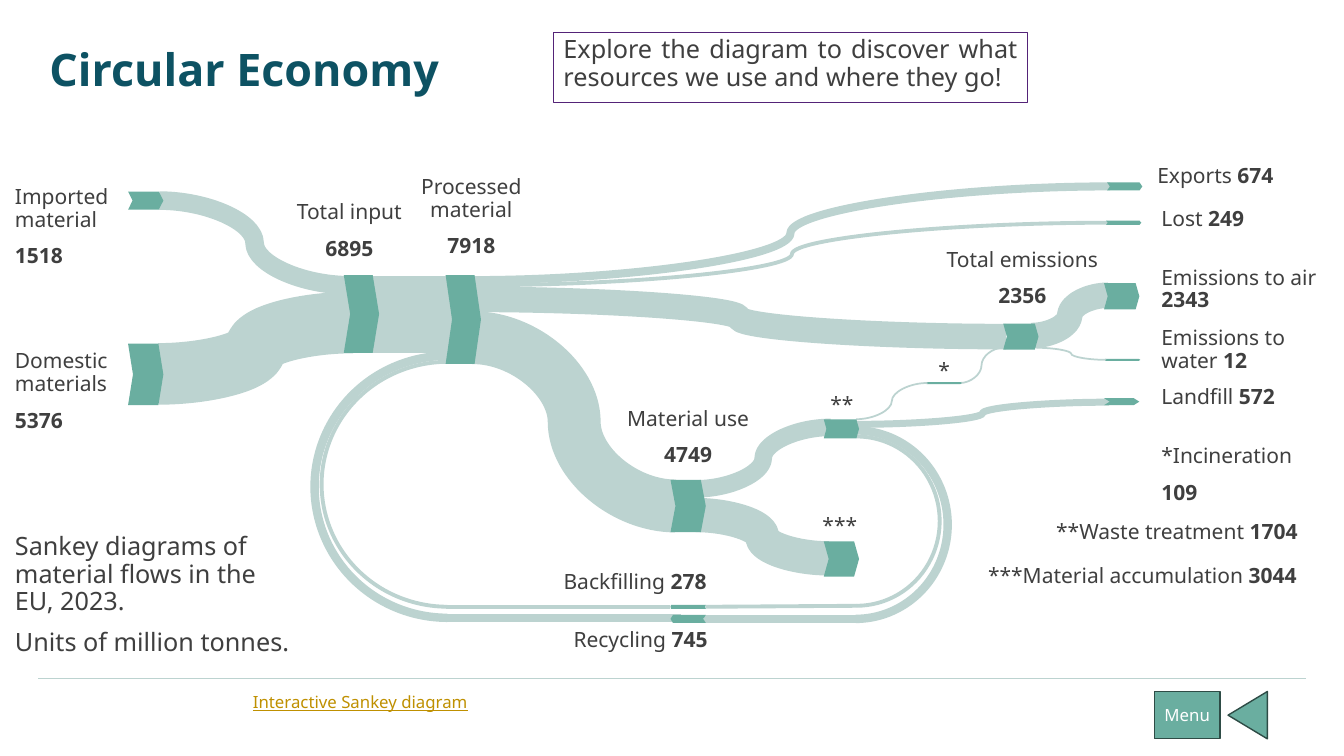
import pptx
import pptx.util
import pptx.dml.color
import pptx.enum.shapes
import pptx.enum.text
import pptx.oxml.ns
from lxml import etree

Inches = pptx.util.Inches
Pt = pptx.util.Pt
RGBColor = pptx.dml.color.RGBColor
SHAPE = pptx.enum.shapes.MSO_SHAPE
CONNECTOR = pptx.enum.shapes.MSO_CONNECTOR
ALIGN = pptx.enum.text.PP_ALIGN
ANCHOR = pptx.enum.text.MSO_ANCHOR

FONT = "Noto Sans"
TEXT = RGBColor(0x3F, 0x3F, 0x3F)
TITLE = RGBColor(0x0D, 0x52, 0x63)
FLOW = RGBColor(0xBC, 0xD3, 0xD0)
NODE = RGBColor(0x6A, 0xAE, 0xA0)
OUTLINE = RGBColor(0x2E, 0x4C, 0x46)
PURPLE = RGBColor(0x54, 0x23, 0x78)
GOLD = RGBColor(0xBF, 0x90, 0x00)
WHITE = RGBColor(0xFF, 0xFF, 0xFF)

HEADING = "Circular Economy"
INVITATION = "Explore the diagram to discover what resources we use and where they go!"
EXPLANATION = [["Sankey diagrams of material flows in the EU, 2023."], ["Units of million tonnes."]]

STACKED_LABELS = [
    ("Total emissions", "2356", 9.12, 2.42, 2.04, 0.8, ALIGN.CENTER),
    ("*Incineration", "109", 11.42, 4.37, 1.55, 0.8, ALIGN.LEFT),
    ("Imported material", "1518", 0.05, 1.8, 1.26, 1.17, ALIGN.LEFT),
    ("Domestic materials", "5376", 0.05, 3.43, 1.63, 1.17, ALIGN.LEFT),
    ("Material use", "4749", 6.01, 4, 1.63, 0.8, ALIGN.CENTER),
    ("Total input", "6895", 2.65, 1.95, 1.63, 0.8, ALIGN.CENTER),
    ("Processed material", "7918", 3.86, 1.7, 1.63, 0.8, ALIGN.CENTER),
]
INLINE_LABELS = [
    ("Exports ", "674", 11.38, 1.59, 1.63, 0.4, ALIGN.LEFT),
    ("Lost ", "249", 11.42, 2.02, 1.09, 0.35, ALIGN.LEFT),
    ("Emissions to air ", "2343", 11.42, 2.6, 1.77, 0.6, ALIGN.LEFT),
    ("Emissions to water ", "12", 11.42, 3.2, 1.94, 0.8, ALIGN.LEFT),
    ("Landfill ", "572", 11.42, 3.78, 1.63, 0.48, ALIGN.LEFT),
    ("***Material accumulation ", "3044", 9.48, 5.56, 3.48, 0.45, ALIGN.RIGHT),
    ("**Waste treatment ", "1704", 10.28, 5.12, 2.69, 0.77, ALIGN.RIGHT),
    ("Backfilling ", "278", 5.4, 5.62, 1.8, 0.42, ALIGN.CENTER),
    ("Recycling ", "745", 5.59, 6.19, 2.24, 0.8, ALIGN.LEFT),
]
FOOTNOTE_MARKS = [
    ("*", 9.16, 3.53, 0.41, 0.31),
    ("***", 8.01, 5.06, 0.64, 0.35),
    ("**", 8.06, 3.86, 0.58, 0.34),
]

CURVED_FLOWS = [
    (1.58, 1.99, 3.47, 2.83, 13.25),
    (1.57, 3.71, 3.5, 3.2, 44),
    (4.69, 3.35, 6.7, 5.02, 37.75),
    (6.9, 5.11, 8.22, 5.54, 24.5),
    (6.9, 4.85, 8.24, 4.24, 12.5),
    (8.49, 4.21, 11, 3.99, 5),
    (10.23, 3.33, 10.99, 2.93, 18.25),
    (4.68, 2.97, 9.98, 3.34, 18.25),
    (4.67, 2.78, 11.01, 1.85, 5.75),
    (4.72, 2.83, 10.99, 2.21, 2.75),
    (8.49, 4.16, 9.2, 3.8, 1.25),
    (9.52, 3.8, 9.95, 3.45, 1.25),
    (10.28, 3.45, 10.97, 3.57, 1.25),
]
STRAIGHT_FLOWS = [
    (3.66, 3.12, 4.49, 3.12, 55.25),
    (8.5, 6.01, 7, 6.02, 2.75),
    (8.49, 6.14, 6.98, 6.14, 6),
    (6.65, 6.02, 4.42, 6.02, 2.75),
    (6.75, 6.13, 4.43, 6.13, 6),
]
FOOTER_RULE = (0.38, 6.73, 12.95, 6.73, 1.1)

RIGHT_HALF = (161.88, 53.9)
LEFT_HALF = (54.1, 162.12)
RETURN_LOOPS = [
    (7.57, 4.27, 1.83, 1.87, RIGHT_HALF, 6),
    (7.67, 4.33, 1.65, 1.68, RIGHT_HALF, 2.75),
    (3.12, 3.53, 2.64, 2.6, LEFT_HALF, 6),
    (3.19, 3.59, 2.5, 2.43, LEFT_HALF, 2.75),
]

NODE_WIDTH = 0.35
NODES = [
    (10.95, 2.81, 0.26, 0.14, 0),
    (10.95, 3.95, 0.07, 0.8, 0),
    (10.98, 1.81, 0.08, 0.35, 0),
    (10.97, 2.19, 0.04, 0.45, 0),
    (8.17, 5.37, 0.35, 0.14, 0),
    (3.41, 2.73, 0.77, 0.18, 0),
    (4.42, 2.73, 0.88, 0.18, 0),
    (6.65, 4.76, 0.52, 0.14, 0),
    (6.65, 6, 0.04, 0.14, 180),
    (6.65, 6.1, 0.08, 0.31, 180),
    (1.27, 3.41, 0.61, 0.14, 0),
    (1.27, 1.9, 0.18, 0.25, 0),
    (9.19, 3.79, 0.02, 0.8, 0),
    (10.96, 3.56, 0.02, 0.8, 0),
    (9.95, 3.21, 0.26, 0.14, 0),
    (8.17, 4.16, 0.19, 0.14, 0),
]

deck = pptx.Presentation()
deck.slide_width, deck.slide_height = Inches(13.33), Inches(7.5)
slide = deck.slides.add_slide(deck.slide_layouts[5])
shapes = slide.shapes


def write(holder, paragraphs, size=15, color=TEXT, align=ALIGN.LEFT, spacing=0.9,
          bold=False, underline=None, anchor=ANCHOR.TOP):
    frame = holder.text_frame
    frame.word_wrap = True
    frame.auto_size = pptx.enum.text.MSO_AUTO_SIZE.NONE
    frame.vertical_anchor = anchor
    for index, runs in enumerate(paragraphs):
        paragraph = frame.add_paragraph() if index else frame.paragraphs[0]
        paragraph.alignment = align
        paragraph.line_spacing = spacing
        paragraph.space_before = Pt(10 if index else 0)
        for words in runs:
            run = paragraph.add_run()
            run.text = words
            run.font.name = FONT
            run.font.size = Pt(size)
            run.font.color.rgb = color
            run.font.bold = bold or words.isdigit()
            run.font.underline = underline


def text_box(paragraphs, left, top, width, height, **style):
    box = shapes.add_textbox(Inches(left), Inches(top), Inches(width), Inches(height))
    write(box, paragraphs, **style)


def draw(preset, left, top, width, height, fill=None, line=None, weight=1, adjust=(), turn=0):
    part = shapes.add_shape(preset, Inches(left), Inches(top), Inches(width), Inches(height))
    part.shadow.inherit = False
    part.rotation = turn
    for index, value in enumerate(adjust):
        part.adjustments[index] = value
    if fill is None:
        part.fill.background()
    else:
        part.fill.solid()
        part.fill.fore_color.rgb = fill
    if line is None:
        part.line.fill.background()
    else:
        part.line.color.rgb = line
        part.line.width = Pt(weight)
    return part


def draw_flow(kind, x1, y1, x2, y2, weight):
    flow = shapes.add_connector(kind, Inches(x1), Inches(y1), Inches(x2), Inches(y2))
    flow.line.color.rgb = FLOW
    flow.line.width = Pt(weight)
    etree.SubElement(flow._element.spPr, pptx.oxml.ns.qn("a:effectLst"))


heading = shapes.title
heading.left, heading.top = Inches(0.39), Inches(0.4)
heading.width, heading.height = Inches(4.28), Inches(1.17)
write(heading, [[HEADING]], size=32, color=TITLE, spacing=0.95, bold=True)

draw_flow(CONNECTOR.STRAIGHT, *FOOTER_RULE)
text_box(EXPLANATION, 0.05, 5.25, 2.99, 1.48, size=18)
for name, amount, left, top, width, height, align in STACKED_LABELS:
    text_box([[name], [amount]], left, top, width, height, align=align)
for name, amount, left, top, width, height, align in INLINE_LABELS:
    text_box([[name, amount]], left, top, width, height, align=align)
for mark, *place in FOOTNOTE_MARKS:
    text_box([[mark]], *place, align=ALIGN.CENTER)

invitation = draw(SHAPE.RECTANGLE, 5.49, 0.32, 4.7, 0.7, line=PURPLE)
write(invitation, [[INVITATION]], size=18, align=ALIGN.JUSTIFY)

for flow_ends in CURVED_FLOWS:
    draw_flow(CONNECTOR.CURVE, *flow_ends)
for flow_ends in STRAIGHT_FLOWS:
    draw_flow(CONNECTOR.STRAIGHT, *flow_ends)
for left, top, width, height, half, weight in RETURN_LOOPS:
    draw(SHAPE.ARC, left, top, width, height, line=FLOW, weight=weight, adjust=half)
for left, top, height, notch, turn in NODES:
    draw(SHAPE.CHEVRON, left, top, NODE_WIDTH, height, fill=NODE, adjust=(notch,), turn=turn)

text_box([["Interactive Sankey diagram"]], 2.41, 6.81, 8.58, 0.4,
         size=12, color=GOLD, spacing=1, underline=True)
menu = draw(SHAPE.RECTANGLE, 11.45, 6.86, 0.65, 0.47, fill=NODE, line=OUTLINE)
write(menu, [["Menu"]], size=12, color=WHITE, align=ALIGN.CENTER, spacing=1, anchor=ANCHOR.MIDDLE)
menu.text_frame.margin_left = menu.text_frame.margin_right = Inches(0.05)
draw(SHAPE.ISOSCELES_TRIANGLE, 12.14, 6.9, 0.47, 0.39, fill=NODE, line=OUTLINE, turn=270)

deck.save("out.pptx")
